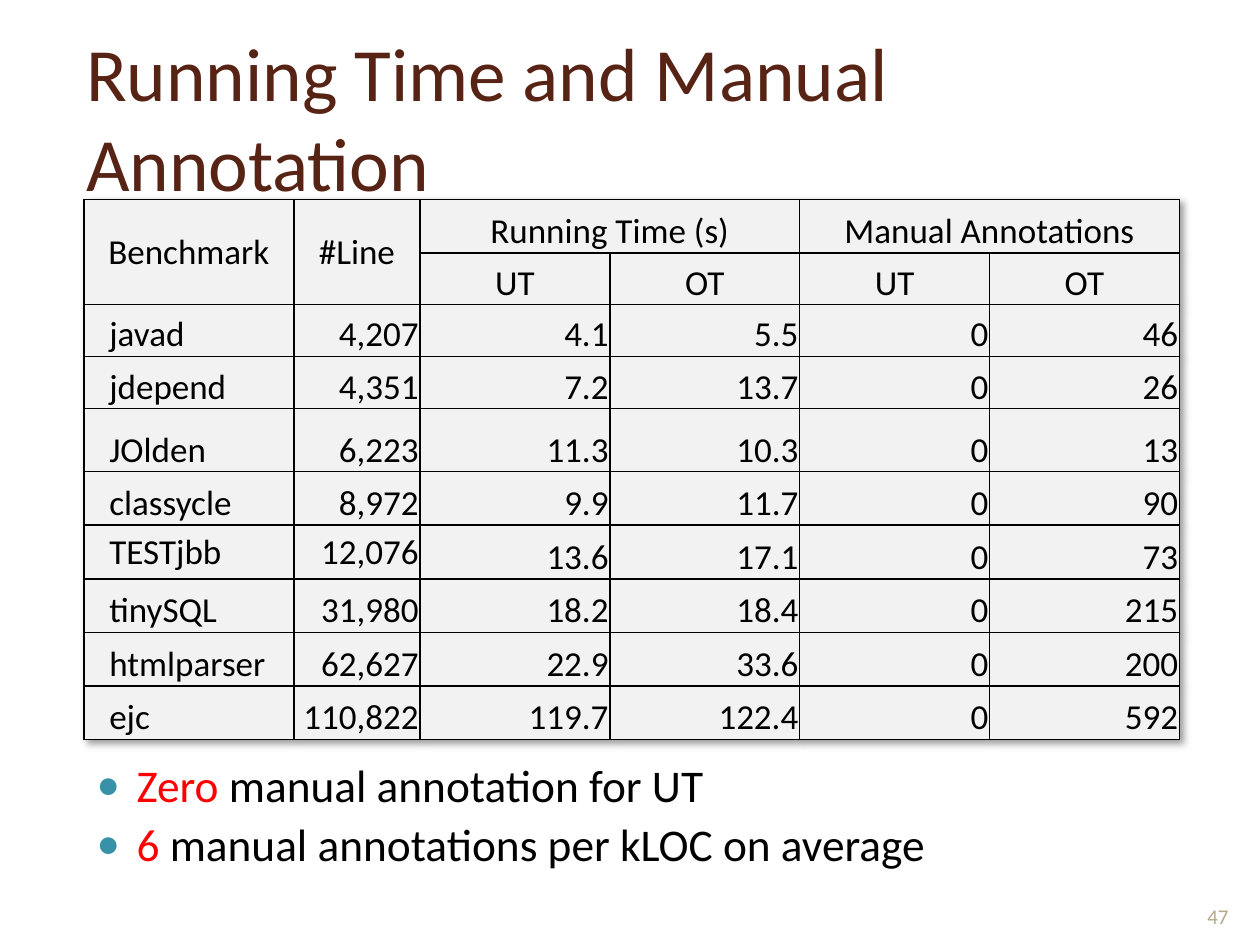
from lxml.etree import SubElement as Sub, Element
from pptx import Presentation
from pptx.dml.color import RGBColor as RGB
from pptx.enum.text import MSO_ANCHOR as Anc, MSO_AUTO_SIZE as Fit, PP_ALIGN as Al
from pptx.oxml.ns import qn
from pptx.util import Pt

HEX = {"title": "572314", "text": "000000", "key": "FF0000", "dot": "3891A7",
       "page": "B6A98A", "cell": "F2F2F2", "line": "000000"}
FONT = "Calibri"

COLS = [120, 72] + [108.5] * 4
ROWS = [30.6, 29.5, 29.6, 29.9, 36] + [30.6] * 5
HEADS = [
    ["Benchmark", "#Line", "Running Time (s)", "", "Manual Annotations", ""],
    ["", "", "UT", "OT", "UT", "OT"],
]
DATA = [
    ["javad", "4,207", "4.1", "5.5", "0", "46"],
    ["jdepend", "4,351", "7.2", "13.7", "0", "26"],
    ["JOlden", "6,223", "11.3", "10.3", "0", "13"],
    ["classycle", "8,972", "9.9", "11.7", "0", "90"],
    ["TESTjbb", "12,076", "13.6", "17.1", "0", "73"],
    ["tinySQL", "31,980", "18.2", "18.4", "0", "215"],
    ["htmlparser", "62,627", "22.9", "33.6", "0", "200"],
    ["ejc", "110,822", "119.7", "122.4", "0", "592"],
]
MERGES = [(0, 0, 1, 0), (0, 1, 1, 1), (0, 2, 0, 3), (0, 4, 0, 5)]
MID = {(0, 0), (0, 1), (6, 0), (6, 1)}  # cells centred vertically
NOTES = [("Zero ", "manual annotation for UT"),
         ("6 ", "manual annotations per kLOC on average")]


def put(obj, **vals):
    for name, val in vals.items():
        setattr(obj, name, val)


def place(shape, box):
    put(shape, **dict(zip(("left", "top", "width", "height"), map(Pt, box))))


def write(para, text, size, color):
    run = para.add_run()
    run.text = text
    put(run.font, name=FONT, size=Pt(size))
    run.font.color.rgb = RGB.from_string(HEX[color])


def tint(parent, color):
    fill = Sub(parent, qn("a:solidFill"))
    return Sub(fill, qn("a:srgbClr"), val=HEX[color])


def title(slide, box):
    shape = slide.shapes.title
    place(shape, box)
    frame = shape.text_frame
    put(frame, auto_size=Fit.NONE, word_wrap=True, vertical_anchor=Anc.MIDDLE)
    para = frame.paragraphs[0]
    para.alignment = Al.LEFT
    write(para, "Running Time and Manual Annotation", 43, "title")


def dot(para):
    props = para._p.get_or_add_pPr()
    props.set("marL", str(Pt(28.8)))
    props.set("indent", str(Pt(-22.3)))
    Sub(Sub(props, qn("a:buClr")), qn("a:srgbClr"), val=HEX["dot"])
    Sub(props, qn("a:buSzPct"), val="80000")
    Sub(props, qn("a:buFont"), typeface=FONT)
    Sub(props, qn("a:buChar"), char="●")


def notes(slide, box):
    shape = slide.placeholders[1]
    place(shape, box)
    frame = shape.text_frame
    put(frame, auto_size=Fit.NONE, word_wrap=True,
        vertical_anchor=Anc.BOTTOM, margin_bottom=Pt(18))
    for i, (key, rest) in enumerate(NOTES):
        para = frame.add_paragraph() if i else frame.paragraphs[0]
        put(para, line_spacing=0.9, space_before=Pt(6), alignment=Al.LEFT)
        dot(para)
        write(para, key, 25.9, "key")
        write(para, rest, 25.9, "text")


def style(cell, r, c):
    head = r < len(HEADS)
    name = not head and c == 0
    put(cell, margin_left=Pt(14.5 if name else 0.7), margin_right=Pt(0.7),
        margin_top=Pt(0.7), margin_bottom=0,
        vertical_anchor=Anc.MIDDLE if (r, c) in MID else Anc.BOTTOM)
    props = cell._tc.get_or_add_tcPr()
    for side in "LRTB":
        tint(Sub(props, qn("a:ln" + side), w=str(Pt(1))), "line")
    cell.fill.solid()
    cell.fill.fore_color.rgb = RGB.from_string(HEX["cell"])
    para = cell.text_frame.paragraphs[0]
    para.alignment = Al.CENTER if head else Al.LEFT if name else Al.RIGHT
    return para


def shade(table):
    props = table._tbl.tblPr
    list_ = Element(qn("a:effectLst"))
    props.insert(0, list_)
    drop = Sub(list_, qn("a:outerShdw"), blurRad=str(Pt(4)), dist=str(Pt(3)),
               dir="2700000", algn="tl", rotWithShape="0")
    Sub(Sub(drop, qn("a:srgbClr"), val=HEX["line"]), qn("a:alpha"), val="40000")


def results(slide, box):
    rows = HEADS + DATA
    table = slide.shapes.add_table(len(rows), len(COLS), *map(Pt, box)).table
    put(table, first_row=False, horz_banding=False)
    for col, wide in zip(table.columns, COLS):
        col.width = Pt(wide)
    for row, high in zip(table.rows, ROWS):
        row.height = Pt(high)
    for r, row in enumerate(rows):
        for c, text in enumerate(row):
            para = style(table.cell(r, c), r, c)
            if text:
                write(para, text, 20, "text")
    for top, left, low, right in MERGES:
        table.cell(top, left).merge(table.cell(low, right))
    shade(table)


def page(slide, box):
    frame = slide.shapes.add_textbox(*map(Pt, box)).text_frame
    put(frame, word_wrap=True, vertical_anchor=Anc.BOTTOM)
    para = frame.paragraphs[0]
    para.alignment = Al.CENTER
    write(para, "47", 12, "page")


def main():
    deck = Presentation()
    put(deck, slide_width=Pt(720), slide_height=Pt(540))
    slide = deck.slides.add_slide(deck.slide_layouts[1])
    title(slide, (42, 21.6, 672, 90))
    page(slide, (678, 497, 36, 37.5))
    notes(slide, (42, 114, 638.5, 402))
    results(slide, (48, 114, sum(COLS), sum(ROWS)))
    deck.save("out.pptx")


if __name__ == "__main__":
    main()
